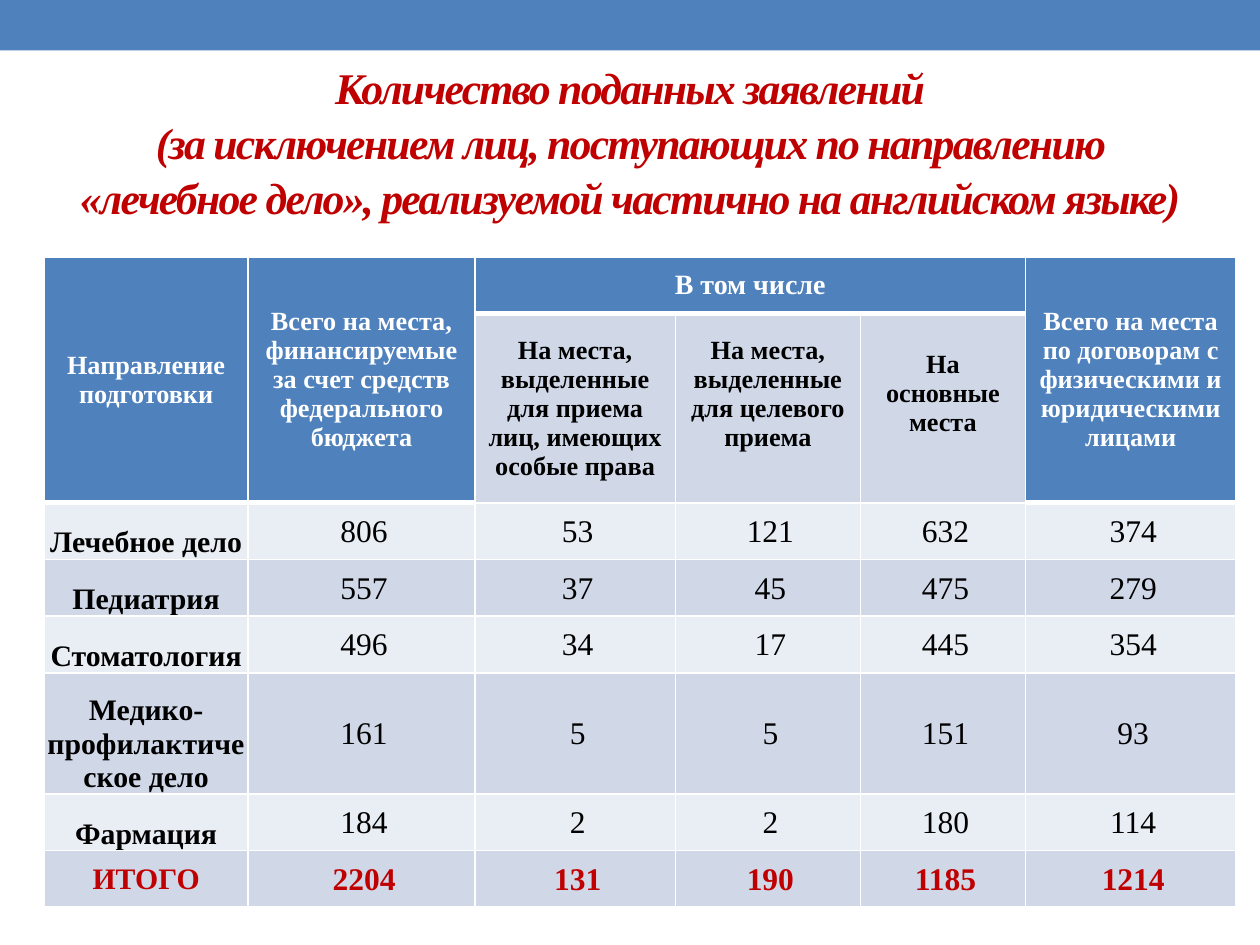
from lxml import etree
from pptx import Presentation
from pptx.dml.color import RGBColor
from pptx.enum.shapes import MSO_SHAPE
from pptx.enum.text import MSO_ANCHOR, PP_ALIGN
from pptx.oxml.ns import qn
from pptx.util import Inches, Pt

RECTANGLE = MSO_SHAPE.RECTANGLE
MIDDLE, BOTTOM = MSO_ANCHOR.MIDDLE, MSO_ANCHOR.BOTTOM
CENTER = PP_ALIGN.CENTER

BLUE = RGBColor(0x4F, 0x81, 0xBD)
DARK_BAND = RGBColor(0xD0, 0xD8, 0xE8)
LIGHT_BAND = RGBColor(0xE9, 0xED, 0xF4)
RED = RGBColor(0xC0, 0x00, 0x00)
WHITE = RGBColor(0xFF, 0xFF, 0xFF)
BLACK = RGBColor(0x00, 0x00, 0x00)
FONT = "Times New Roman"

TITLE = (
    "Количество поданных заявлений\v(за исключением лиц, поступающих по направлению "
    "«лечебное дело», реализуемой частично на английском языке)"
)
COLUMN_WIDTHS = (1.62, 1.8, 1.59, 1.47, 1.31, 1.67)
ROW_HEIGHTS = (0.45, 1.5, 0.45, 0.45, 0.45, 0.96, 0.45, 0.45)
TALL_HEADINGS = {
    0: "Направление подготовки",
    1: "Всего на места, финансируемые за счет средств федерального бюджета",
    5: "Всего на места по договорам с физическими и юридическими лицами",
}
GROUP_HEADING = "В том числе"
SUBHEADINGS = (
    ("На места, выделенные для приема лиц, имеющих особые права", 0.05),
    ("На места, выделенные для целевого приема", 0.28),
    ("На основные места", 0.28),
)
APPLICATIONS = (
    ("Лечебное дело", 806, 53, 121, 632, 374),
    ("Педиатрия", 557, 37, 45, 475, 279),
    ("Стоматология", 496, 34, 17, 445, 354),
    ("Медико-профилактическое дело", 161, 5, 5, 151, 93),
    ("Фармация", 184, 2, 2, 180, 114),
    ("ИТОГО", 2204, 131, 190, 1185, 1214),
)


def format_text(text_frame, size, color, bold=True, italic=False):
    for paragraph in text_frame.paragraphs:
        paragraph.alignment = CENTER
        for run in paragraph.runs:
            font = run.font
            font.name, font.size = FONT, Pt(size)
            font.bold, font.italic = bold, italic
            font.color.rgb = color


def add_banner(slide, left, top, width, height):
    banner = slide.shapes.add_shape(RECTANGLE, left, top, width, height)
    banner.shadow.inherit = False
    banner.fill.solid()
    banner.fill.fore_color.rgb = BLUE
    banner.line.fill.background()


def add_title(slide, left, top, width, height):
    text_frame = slide.shapes.add_textbox(left, top, width, height).text_frame
    text_frame.word_wrap = True
    text_frame.vertical_anchor = MIDDLE
    text_frame.text = TITLE
    text_frame.paragraphs[0].line_spacing = 1.05
    format_text(text_frame, 25, RED, italic=True)
    for run in text_frame.paragraphs[0].runs:
        run.font._element.set("spc", "-100")


def has_heavy_bottom(row, column):
    return row == 0 or (row == 1 and column in TALL_HEADINGS)


def add_borders(cell, row, column):
    widths = {
        "a:lnL": 1,
        "a:lnR": 1,
        "a:lnT": 3 if row and has_heavy_bottom(row - 1, column) else 1,
        "a:lnB": 3 if has_heavy_bottom(row, column) else 1,
    }
    properties = cell._tc.get_or_add_tcPr()
    for side, width in widths.items():
        border = etree.SubElement(properties, qn(side), w=str(Pt(width)))
        solid = etree.SubElement(border, qn("a:solidFill"))
        etree.SubElement(solid, qn("a:srgbClr"), val=str(WHITE))


def fill_cell(cell, color):
    cell.fill.solid()
    cell.fill.fore_color.rgb = color


def write_cell(cell, text, size, color, bold=True, anchor=MIDDLE):
    cell.text_frame.text = str(text)
    cell.vertical_anchor = anchor
    format_text(cell.text_frame, size, color, bold)


def write_headings(table):
    for column, heading in TALL_HEADINGS.items():
        table.cell(0, column).merge(table.cell(1, column))
        write_cell(table.cell(0, column), heading, 15, WHITE)
    table.cell(0, 2).merge(table.cell(0, 4))
    write_cell(table.cell(0, 2), GROUP_HEADING, 16, WHITE)
    for column, (subheading, bottom_margin) in enumerate(SUBHEADINGS, 2):
        cell = table.cell(1, column)
        write_cell(cell, subheading, 15, BLACK)
        cell.margin_bottom = Inches(bottom_margin)


def write_applications(table):
    for row, record in enumerate(APPLICATIONS, 2):
        is_total = row == len(ROW_HEIGHTS) - 1
        color = RED if is_total else BLACK
        for column, entry in enumerate(record):
            cell = table.cell(row, column)
            cell.margin_left = cell.margin_right = cell.margin_top = Inches(0.01)
            cell.margin_bottom = 0
            if column == 0:
                write_cell(cell, entry, 17, color, anchor=MIDDLE if is_total else BOTTOM)
            else:
                write_cell(cell, entry, 18, color, bold=is_total)
                indent = cell.text_frame.paragraphs[0]._p.get_or_add_pPr()
                indent.set("marL", str(Inches(0.04)))


def add_applications_table(slide, left, top, width, height):
    table = slide.shapes.add_table(
        len(ROW_HEIGHTS), len(COLUMN_WIDTHS), left, top, width, height
    ).table
    for column, column_width in zip(table.columns, COLUMN_WIDTHS):
        column.width = Inches(column_width)
    for row, row_height in zip(table.rows, ROW_HEIGHTS):
        row.height = Inches(row_height)
    for row in range(len(ROW_HEIGHTS)):
        for column in range(len(COLUMN_WIDTHS)):
            cell = table.cell(row, column)
            add_borders(cell, row, column)
            if has_heavy_bottom(row, column):
                fill_cell(cell, BLUE)
            else:
                fill_cell(cell, DARK_BAND if row % 2 else LIGHT_BAND)
    write_headings(table)
    write_applications(table)


def main():
    presentation = Presentation()
    presentation.slide_width = Inches(10)
    presentation.slide_height = Inches(7.5)
    slide = presentation.slides.add_slide(presentation.slide_layouts[6])
    add_banner(slide, 0, 0, Inches(10), Inches(0.4))
    add_title(slide, Inches(0.5), Inches(0.58), Inches(9), Inches(1.08))
    add_applications_table(
        slide,
        Inches(0.35),
        Inches(2.04),
        Inches(sum(COLUMN_WIDTHS)),
        Inches(sum(ROW_HEIGHTS)),
    )
    presentation.save("out.pptx")


if __name__ == "__main__":
    main()
